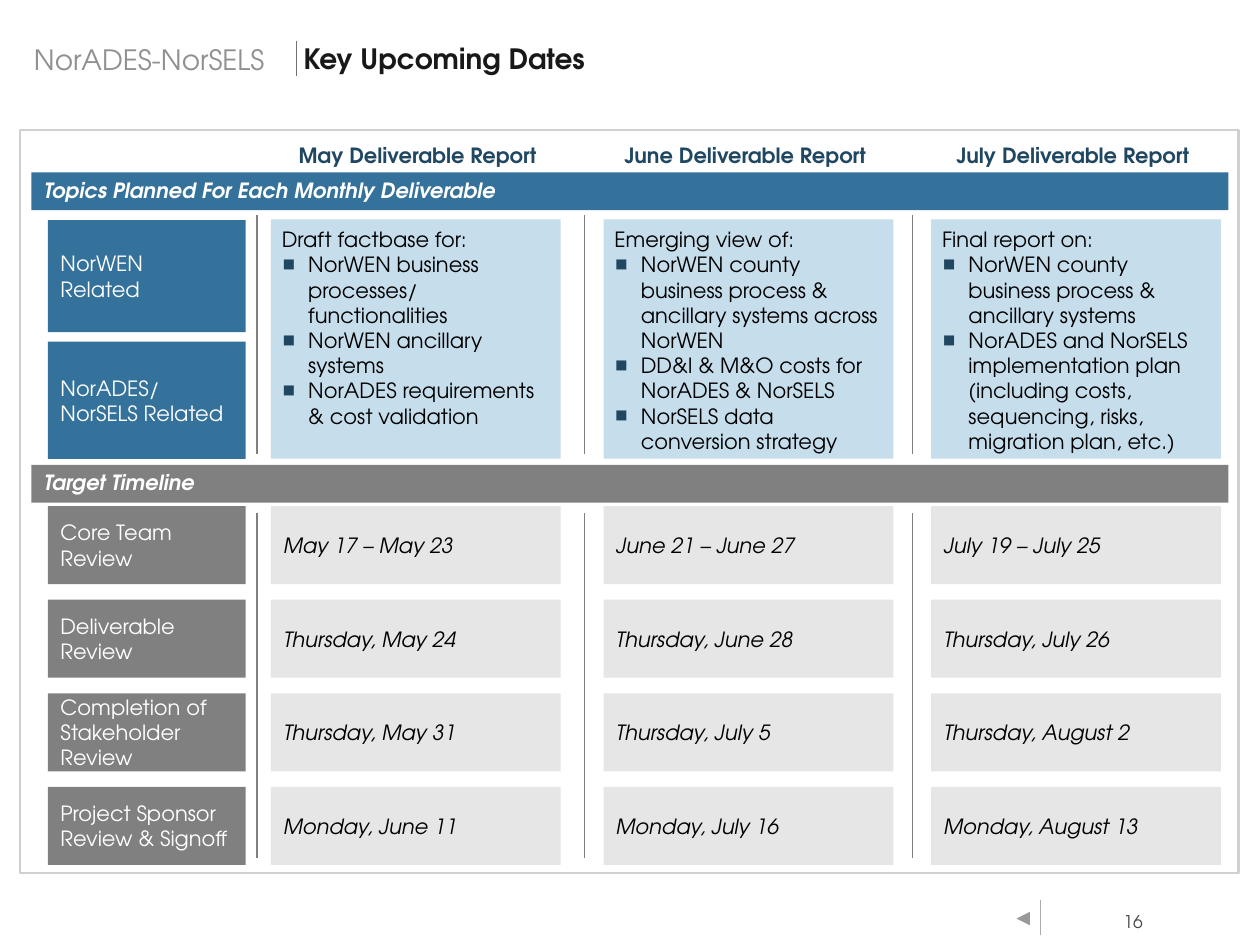
from lxml import etree
from pptx import Presentation
from pptx.dml.color import RGBColor
from pptx.enum.shapes import MSO_CONNECTOR, MSO_SHAPE
from pptx.enum.text import MSO_ANCHOR, MSO_AUTO_SIZE, PP_ALIGN
from pptx.oxml.ns import qn
from pptx.util import Pt

RECTANGLE = MSO_SHAPE.RECTANGLE
BACK_BUTTON = MSO_SHAPE.ACTION_BUTTON_FORWARD_OR_NEXT
STRAIGHT = MSO_CONNECTOR.STRAIGHT
TOP, MIDDLE, BOTTOM = MSO_ANCHOR.TOP, MSO_ANCHOR.MIDDLE, MSO_ANCHOR.BOTTOM
LEFT, CENTER, RIGHT = PP_ALIGN.LEFT, PP_ALIGN.CENTER, PP_ALIGN.RIGHT

FONT = "TeX Gyre Adventor"
BLUE, PALE_BLUE, NAVY = "35729B", "C6DDEC", "204762"
GRAY, PALE_GRAY, WHITE, BLACK = "808080", "E6E6E6", "FFFFFF", "000000"

# Content
PROJECT = "NorADES-NorSELS"
TITLE = "Key Upcoming Dates"
PAGE = "16"
COLUMNS = [
    {"header": "May Deliverable Report", "lead": "Draft factbase for:",
     "topics": ["NorWEN business processes/ functionalities",
                "NorWEN ancillary systems",
                "NorADES requirements & cost validation"],
     "dates": ["May 17 – May 23", "Thursday, May 24",
               "Thursday, May 31", "Monday, June 11"]},
    {"header": "June Deliverable Report", "lead": "Emerging view of:",
     "topics": ["NorWEN county business process & ancillary systems across NorWEN",
                "DD&I & M&O costs for NorADES & NorSELS",
                "NorSELS data conversion strategy"],
     "dates": ["June 21 – June 27", "Thursday, June 28",
               "Thursday, July 5", "Monday, July 16"]},
    {"header": "July Deliverable Report", "lead": "Final report on:",
     "topics": ["NorWEN county business process & ancillary systems",
                "NorADES and NorSELS implementation plan (including costs, "
                "sequencing, risks, migration plan, etc.)"],
     "dates": ["July 19 – July 25", "Thursday, July 26",
               "Thursday, August 2", "Monday, August 13"]},
]
# Text, top, height
BANDS = [("Topics Planned For Each Monthly Deliverable", 98.6, BLUE),
         ("Target Timeline", 265.7, GRAY)]
TOPIC_LABELS = [("NorWEN\vRelated", 125.8, 64),
                ("NorADES/ NorSELS Related", 195.3, 67)]
REVIEWS = ["Core Team Review", "Deliverable Review",
           "Completion of Stakeholder Review", "Project Sponsor Review & Signoff"]

# Grid
LABEL_LEFT, LABEL_WIDTH = 27.4, 113
PANEL_LEFTS, PANEL_WIDTH = [154.8, 344.9, 532.1], 165.6
COLUMN_STEP, DIVIDER_LEFT, HEADER_LEFT = 187.2, 146.9, 151.2
ROW_TOP, ROW_STEP, ROW_HEIGHT = 289.2, 53.5, 44.6
DIVIDER_SPANS = [(123, 259.4), (293, 490.3)]


def color(value):
    return RGBColor.from_string(value)


def place(shape, left, top, width, height):
    shape.left, shape.top = Pt(left), Pt(top)
    shape.width, shape.height = Pt(width), Pt(height)


def set_frame(shape, insets, anchor, wrap=True):
    frame = shape.text_frame
    frame.auto_size = MSO_AUTO_SIZE.NONE
    frame.word_wrap = wrap
    frame.vertical_anchor = anchor
    (frame.margin_left, frame.margin_top,
     frame.margin_right, frame.margin_bottom) = [Pt(inset) for inset in insets]
    return frame


def write(paragraph, text, ink, size=12, bold=False, italic=False, align=LEFT):
    paragraph.alignment = align
    for index, line in enumerate(text.split("\v")):
        if index:
            paragraph.add_line_break()
        run = paragraph.add_run()
        run.text = line
        font = run.font
        font.name, font.size, font.bold, font.italic = FONT, Pt(size), bold, italic
        font.color.rgb = color(ink)


def add_text(slide, box, text, ink, insets=(7.2, 3.6, 7.2, 3.6), anchor=TOP,
             wrap=True, **style):
    shape = slide.shapes.add_textbox(*[Pt(length) for length in box])
    write(set_frame(shape, insets, anchor, wrap).paragraphs[0], text, ink, **style)


def add_box(slide, box, fill, text="", ink=WHITE, kind=RECTANGLE, **style):
    shape = slide.shapes.add_shape(kind, *[Pt(length) for length in box])
    shape.shadow.inherit = False
    shape.fill.solid()
    shape.fill.fore_color.rgb = color(fill)
    shape.line.fill.background()
    if text:
        frame = set_frame(shape, (7.2, 7.2, 7.2, 7.2), MIDDLE)
        write(frame.paragraphs[0], text, ink, **style)
    return shape


def add_divider(slide, left, top, bottom, ink=GRAY, width=0.75):
    line = slide.shapes.add_connector(STRAIGHT, Pt(left), Pt(top), Pt(left), Pt(bottom))
    line.line.color.rgb = color(ink)
    line.line.width = Pt(width)
    etree.SubElement(line._element.spPr, qn("a:effectLst"))


def set_bullet(paragraph, bulleted):
    properties = paragraph._p.get_or_add_pPr()
    indent = Pt(15.1) if bulleted else 0
    properties.set("marL", str(indent))
    properties.set("indent", str(-indent))
    if not bulleted:
        etree.SubElement(properties, qn("a:buNone"))
        return
    bullet_color = etree.SubElement(properties, qn("a:buClr"))
    etree.SubElement(bullet_color, qn("a:srgbClr"), val=NAVY)
    etree.SubElement(properties, qn("a:buSzPct"), val="125000")
    etree.SubElement(properties, qn("a:buFont"), typeface=FONT)
    etree.SubElement(properties, qn("a:buChar"), char="▪")


def fill_topics(panel, left, column):
    place(panel, left, 125.3, PANEL_WIDTH, 136.8)
    panel.fill.solid()
    panel.fill.fore_color.rgb = color(PALE_BLUE)
    frame = set_frame(panel, (6.2, 4.3, 6, 0), TOP)
    for index, text in enumerate([column["lead"], *column["topics"]]):
        paragraph = frame.add_paragraph() if index else frame.paragraphs[0]
        paragraph.space_before = paragraph.space_after = Pt(0)
        paragraph.line_spacing = 1.0
        set_bullet(paragraph, index > 0)
        write(paragraph, text, BLACK)


def main():
    presentation = Presentation()
    presentation.slide_width, presentation.slide_height = Pt(720), Pt(540)
    slide = presentation.slides.add_slide(presentation.slide_layouts.get_by_name("Comparison"))
    title, *panels = [shape for shape in slide.placeholders
                      if shape.placeholder_format.idx < 10]
    for spare in panels[len(COLUMNS):]:
        spare._element.getparent().remove(spare._element)

    # Heading
    add_text(slide, (19.4, 20.5, 151.2, 26.6), PROJECT, "909090",
             (0, 3.6, 0, 3.6), MIDDLE, size=16)
    add_divider(slide, 169.2, 23.3, 43.2, "767171", 0.5)
    place(title, 173.5, 21.2, 520.6, 26.6)
    heading = set_frame(title, (0, 3.6, 0, 3.6), MIDDLE).paragraphs[0]
    heading.line_spacing = 0.9
    write(heading, TITLE, "181818", size=16, bold=True)

    # Frame and section bands
    frame = add_box(slide, (11.5, 74.2, 696.2, 424.8), WHITE)
    frame.fill.background()
    frame.line.color.rgb = color("D0D0D0")
    frame.line.width = Pt(1.5)
    for text, top, fill in BANDS:
        add_box(slide, (18, top, 684, 21.6), fill)
        add_text(slide, (18, top - 0.7, 684, 21.6), text, WHITE, bold=True, italic=True)

    # Row labels
    for text, top, height in TOPIC_LABELS:
        add_box(slide, (LABEL_LEFT, top, LABEL_WIDTH, height), BLUE, text)
    row_tops = [ROW_TOP + ROW_STEP * row for row in range(len(REVIEWS))]
    for text, top in zip(REVIEWS, row_tops):
        add_box(slide, (LABEL_LEFT, top, LABEL_WIDTH, ROW_HEIGHT), GRAY, text)

    # Monthly columns
    for index, (column, panel, left) in enumerate(zip(COLUMNS, panels, PANEL_LEFTS)):
        offset = COLUMN_STEP * index
        add_text(slide, (HEADER_LEFT + offset, 81.4, 175, 15.8), column["header"], NAVY,
                 (0, 0, 0, 1.4), BOTTOM, bold=True, align=CENTER)
        for top, bottom in DIVIDER_SPANS:
            add_divider(slide, DIVIDER_LEFT + offset, top, bottom)
        fill_topics(panel, left, column)
        for text, top in zip(column["dates"], row_tops):
            add_box(slide, (left, top, PANEL_WIDTH, ROW_HEIGHT), PALE_GRAY,
                    text, BLACK, italic=True)

    # Footer
    button = add_box(slide, (579.6, 518.4, 10.1, 13), WHITE, kind=BACK_BUTTON)
    button.rotation = 180
    add_divider(slide, 594.7, 514.1, 534.2, "AFABAB", 0.5)
    add_text(slide, (635.8, 517.7, 23, 17.3), PAGE, "464646", (5.8, 2.9, 5.8, 2.9),
             wrap=False, size=10, align=RIGHT)

    presentation.save("out.pptx")


if __name__ == "__main__":
    main()
